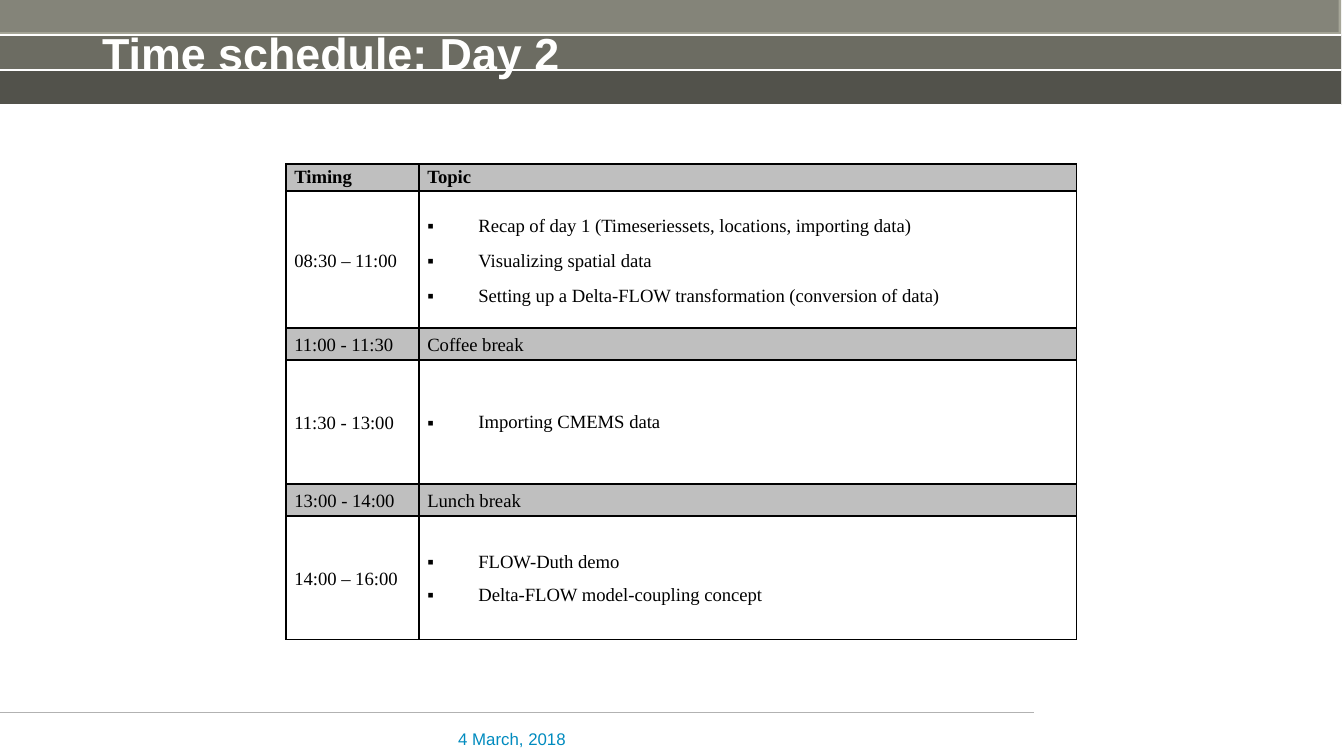
from lxml import etree
from pptx import Presentation
from pptx.dml.color import RGBColor
from pptx.enum.shapes import MSO_CONNECTOR, MSO_SHAPE
from pptx.enum.text import MSO_ANCHOR
from pptx.oxml.ns import qn
from pptx.util import Inches, Pt

RECTANGLE = MSO_SHAPE.RECTANGLE
STRAIGHT = MSO_CONNECTOR.STRAIGHT
TOP, MIDDLE = MSO_ANCHOR.TOP, MSO_ANCHOR.MIDDLE

BAND_WIDTH, BAND_HEIGHT = 9.98, 0.26
BULLET_INDENT = 0.38
GREY = "BFBFBF"
COLUMN_WIDTHS = (0.99, 4.89)

# Row height, timing, topic (a list is bulleted), line spacing of the topic
SCHEDULE = [
    (0.2, "Timing", "Topic", 1.15),
    (1.02, "08:30 – 11:00", [
        "Recap of day 1 (Timeseriessets, locations, importing data)",
        "Visualizing spatial data",
        "Setting up a Delta-FLOW transformation (conversion of data)"], 1.15),
    (0.24, "11:00 - 11:30", "Coffee break", 1.15),
    (0.92, "11:30 - 13:00", ["Importing CMEMS data"], 1.07),
    (0.24, "13:00 - 14:00", "Lunch break", 1.15),
    (0.92, "14:00 – 16:00", [
        "FLOW-Duth demo",
        "Delta-FLOW model-coupling concept"], 1.07),
]


def color(value):
    return RGBColor.from_string(value)


def set_font(para, name, size, value, bold=False):
    font = para.font
    font.name, font.size, font.bold = name, Pt(size), bold
    font.color.rgb = color(value)


def add_band(page, left, top, height, fill, opacity=100):
    band = page.shapes.add_shape(RECTANGLE, Inches(left), Inches(top),
                                 Inches(BAND_WIDTH), Inches(height))
    band.shadow.inherit = False
    band.fill.solid()
    band.fill.fore_color.rgb = color(fill)
    band.line.fill.background()
    if opacity < 100:
        tint = band.fill._xPr.find(qn("a:solidFill"))[0]
        etree.SubElement(tint, qn("a:alpha"), val=str(opacity * 1000))


def add_rule(page, top, width, value):
    rule = page.shapes.add_connector(STRAIGHT, Inches(0), Inches(top),
                                     Inches(width), Inches(top))
    rule.line.color.rgb = color(value)
    rule.line.width = Pt(0.75)
    etree.SubElement(rule._element.spPr, qn("a:effectLst"))


def add_text(page, text, left, top, width, height, size, value,
             bold=False, anchor=TOP):
    box = page.shapes.add_textbox(Inches(left), Inches(top),
                                  Inches(width), Inches(height))
    frame = box.text_frame
    frame.word_wrap = True
    frame.vertical_anchor = anchor
    frame.margin_left = frame.margin_right = 0
    frame.margin_top = frame.margin_bottom = 0
    para = frame.paragraphs[0]
    para.text = text
    set_font(para, "Arial", size, value, bold)


def add_bullet(para):
    properties = para._p.get_or_add_pPr()
    properties.set("marL", str(Inches(BULLET_INDENT)))
    properties.set("indent", str(-Inches(BULLET_INDENT)))
    etree.SubElement(properties, qn("a:buFont"), typeface="Arial")
    etree.SubElement(properties, qn("a:buChar"), char="▪")


def add_borders(cell):
    properties = cell._tc.get_or_add_tcPr()
    for index, side in enumerate(("lnL", "lnR", "lnT", "lnB")):
        line = etree.Element(qn("a:" + side), w=str(Pt(1)))
        fill = etree.SubElement(line, qn("a:solidFill"))
        etree.SubElement(fill, qn("a:srgbClr"), val="000000")
        properties.insert(index, line)


def fill_cell(cell, content, spacing, header, shaded):
    cell.margin_left = cell.margin_right = Inches(0.06)
    cell.margin_top = cell.margin_bottom = 0
    cell.vertical_anchor = TOP if header else MIDDLE
    if shaded:
        cell.fill.solid()
        cell.fill.fore_color.rgb = color(GREY)
    else:
        cell.fill.background()
    add_borders(cell)

    bulleted = isinstance(content, list)
    frame = cell.text_frame
    for index, text in enumerate(content if bulleted else [content]):
        para = frame.add_paragraph() if index else frame.paragraphs[0]
        para.text = text
        para.line_spacing = spacing
        if index:
            para.space_before = Pt(6)
        if bulleted:
            add_bullet(para)
        set_font(para, "Times New Roman", 10, "000000", header)


def add_schedule(page, left, top):
    heights = [row[0] for row in SCHEDULE]
    table = page.shapes.add_table(
        len(SCHEDULE), len(COLUMN_WIDTHS), Inches(left), Inches(top),
        Inches(sum(COLUMN_WIDTHS)), Inches(sum(heights))).table
    table.first_row = table.horz_banding = False
    for column, width in zip(table.columns, COLUMN_WIDTHS):
        column.width = Inches(width)
    for index, (height, timing, topic, spacing) in enumerate(SCHEDULE):
        table.rows[index].height = Inches(height)
        header = index == 0
        shaded = isinstance(topic, str)
        fill_cell(table.cell(index, 0), timing, 1.15, header, shaded)
        fill_cell(table.cell(index, 1), topic, spacing, header, shaded)


def main():
    # A 16:9 page, ten inches wide
    deck = Presentation()
    deck.slide_width, deck.slide_height = Inches(10), Inches(10 * 9 / 16)
    page = deck.slides.add_slide(deck.slide_layouts[6])

    # Header: one base band darkened in three steps, with white rules
    add_band(page, 0, 0, 3 * BAND_HEIGHT, "A6A698")
    add_band(page, -0.02, -0.02, BAND_HEIGHT, "000000", 20)
    add_band(page, 0, BAND_HEIGHT, BAND_HEIGHT, "000000", 35)
    add_band(page, 0, 2 * BAND_HEIGHT, BAND_HEIGHT, "000000", 50)
    for step in (1, 2, 3):
        add_rule(page, step * BAND_HEIGHT, BAND_WIDTH, "FFFFFF")

    # Footer
    add_rule(page, 5.3, 7.69, "B2B2B2")
    add_text(page, "4 March, 2018", 3.41, 5.42, 1.57, 0.26, 9, "008BBF")

    # Title and schedule
    add_text(page, "Time schedule: Day 2", 0.76, 0.14, 8.57, 0.5, 24,
             "FFFFFE", bold=True, anchor=MIDDLE)
    add_schedule(page, 2.13, 1.22)

    deck.save("out.pptx")


if __name__ == "__main__":
    main()
